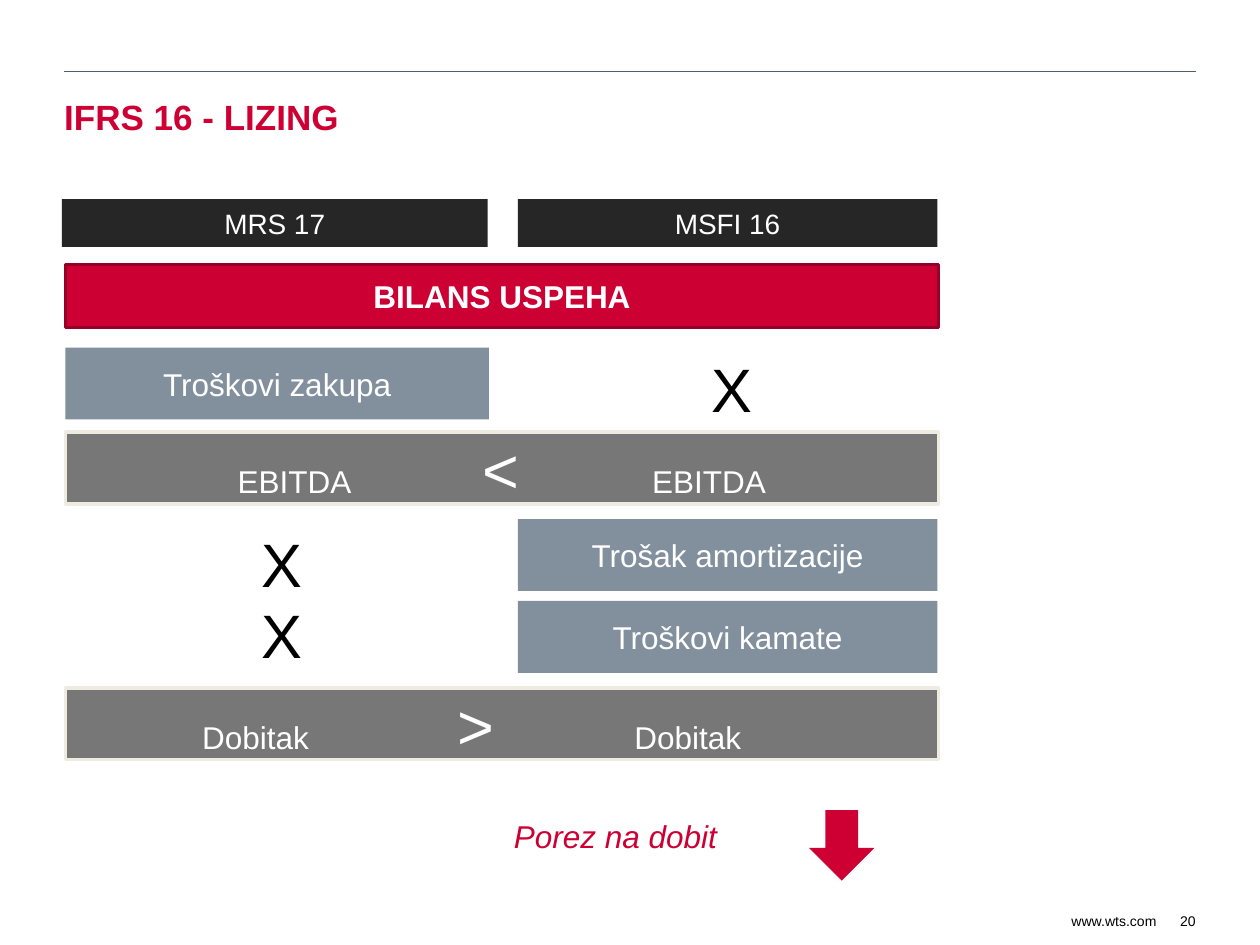
from dataclasses import dataclass
from typing import NamedTuple

from lxml import etree
from pptx import Presentation
from pptx.dml.color import RGBColor
from pptx.enum.shapes import MSO_CONNECTOR, MSO_SHAPE
from pptx.enum.text import MSO_ANCHOR, PP_ALIGN
from pptx.oxml.ns import qn
from pptx.util import Inches, Pt

RECT, DOWN_ARROW = MSO_SHAPE.RECTANGLE, MSO_SHAPE.DOWN_ARROW
STRAIGHT = MSO_CONNECTOR.STRAIGHT
LEFT, CENTER, RIGHT = PP_ALIGN.LEFT, PP_ALIGN.CENTER, PP_ALIGN.RIGHT
TOP, MIDDLE = MSO_ANCHOR.TOP, MSO_ANCHOR.MIDDLE


@dataclass(frozen=True)
class Theme:
    font: str = "Arial"
    red: str = "CE0033"
    banner: str = "CC0033"
    banner_edge: str = "970026"
    header: str = "262626"
    item: str = "82909E"
    result: str = "777777"
    result_edge: str = "EEECE1"
    rule: str = "515D69"
    white: str = "FFFFFF"
    black: str = "000000"
    title_pt: int = 20
    body_pt: int = 18
    header_pt: int = 16
    sign_pt: int = 36
    cross_pt: int = 35
    footer_pt: int = 8


class Span(NamedTuple):
    """Start and length along one axis, in inches."""
    start: float
    size: float


class Block(NamedTuple):
    text: str
    col: Span
    row: Span
    fill: str
    pt: int
    edge: str = ""
    bold: bool = False


class Label(NamedTuple):
    text: str
    col: Span
    row: Span
    pt: int
    color: str
    align: PP_ALIGN = LEFT
    anchor: MSO_ANCHOR = MIDDLE
    bold: bool = False
    italic: bool = False
    inset: float = 0


class Comparison(NamedTuple):
    term: str
    sign: str
    row: Span
    stops: tuple  # centres of term, sign, term from the text edge


T = Theme()

# Grid: page margins, the two standards side by side, and the rows
PAGE = Span(0.51, 8.98)
OLD, NEW, BOTH = Span(0.52, 3.36), Span(4.11, 3.33), Span(0.52, 6.93)
OLD_X, NEW_X = Span(1.98, 0.92), Span(5.55, 0.92)
ROW_H = 0.57
HEADER, BANNER = Span(1.58, 0.38), Span(2.1, 0.5)
RENT, EBITDA, DEPRECIATION, INTEREST, PROFIT, TAX = (
    Span(top, ROW_H) for top in (2.76, 3.43, 4.12, 4.77, 5.46, 6.35))
FOOTER = Span(7.24, 0.14)

BLOCKS = [
    Block("MRS 17", Span(0.49, 3.38), HEADER, T.header, T.header_pt),
    Block("MSFI 16", NEW, HEADER, T.header, T.header_pt),
    Block("BILANS USPEHA", BOTH, BANNER, T.banner, T.body_pt, T.banner_edge, True),
    Block("Troškovi zakupa", OLD, RENT, T.item, T.body_pt),
    Block("Trošak amortizacije", NEW, DEPRECIATION, T.item, T.body_pt),
    Block("Troškovi kamate", NEW, INTEREST, T.item, T.body_pt),
]
COMPARISONS = [
    Comparison("EBITDA", "<", EBITDA, (1.72, 3.36, 5.01)),
    Comparison("Dobitak", ">", PROFIT, (1.41, 3.16, 4.84)),
]
CROSSES = [
    Label("X", col, Span(top, 0.69), T.cross_pt, T.black, anchor=TOP, inset=0.1)
    for col, top in ((NEW_X, 2.74), (OLD_X, 4.13), (OLD_X, 4.69))
]
LABELS = CROSSES + [
    Label("IFRS 16 - LIZING", PAGE, Span(0.76, 0.31), T.title_pt, T.red,
          anchor=TOP, bold=True),
    Label("Porez na dobit", Span(3.98, 3.53), TAX, T.body_pt, T.red,
          italic=True, inset=0.1),
    Label("www.wts.com", Span(8.43, 0.75), FOOTER, T.footer_pt, T.black, RIGHT),
    Label("20", Span(9.27, 0.22), FOOTER, T.footer_pt, T.black, RIGHT),
]


def rgb(color: str) -> RGBColor:
    return RGBColor.from_string(color)


def box(col: Span, row: Span) -> tuple:
    return tuple(Inches(v) for v in (col.start, row.start, col.size, row.size))


def style(font, pt: int, color: str, bold: bool = False, italic: bool = False) -> None:
    font.name, font.size = T.font, Pt(pt)
    font.bold, font.italic = bold, italic
    font.color.rgb = rgb(color)


def draw_shape(slide, kind, col: Span, row: Span, fill: str, edge: str = ""):
    s = slide.shapes.add_shape(kind, *box(col, row))
    s.shadow.inherit = False
    s.fill.solid()
    s.fill.fore_color.rgb = rgb(fill)
    if edge:
        s.line.color.rgb = rgb(edge)
        s.line.width = Pt(2)
    else:
        s.line.fill.background()
    s.text_frame.vertical_anchor = MIDDLE
    return s


def draw_block(slide, b: Block) -> None:
    s = draw_shape(slide, RECT, b.col, b.row, b.fill, b.edge)
    p = s.text_frame.paragraphs[0]
    p.text, p.alignment = b.text, CENTER
    style(p.font, b.pt, T.white, b.bold)


def draw_comparison(slide, c: Comparison) -> None:
    s = draw_shape(slide, RECT, BOTH, c.row, T.result, T.result_edge)
    p = s.text_frame.paragraphs[0]
    p.alignment = LEFT
    tabs = etree.SubElement(p._p.get_or_add_pPr(), qn("a:tabLst"))
    for stop in c.stops:
        etree.SubElement(tabs, qn("a:tab"), pos=str(Inches(stop)), algn="ctr")
    for word, pt in ((c.term, T.body_pt), (c.sign, T.sign_pt), (c.term, T.body_pt)):
        r = p.add_run()
        r.text = "\t" + word
        style(r.font, pt, T.white)


def draw_label(slide, lb: Label) -> None:
    tf = slide.shapes.add_textbox(*box(lb.col, lb.row)).text_frame
    tf.word_wrap, tf.vertical_anchor = True, lb.anchor
    tf.margin_left = tf.margin_right = Inches(lb.inset)
    tf.margin_top = tf.margin_bottom = Inches(lb.inset / 2)
    p = tf.paragraphs[0]
    p.text, p.alignment = lb.text, lb.align
    style(p.font, lb.pt, lb.color, lb.bold, lb.italic)


def draw_rule(slide, y: float) -> None:
    ends = (PAGE.start, y, PAGE.start + PAGE.size, y)
    line = slide.shapes.add_connector(STRAIGHT, *(Inches(v) for v in ends))
    line.line.color.rgb = rgb(T.rule)
    line.line.width = Pt(0.75)
    etree.SubElement(line._element.spPr, qn("a:effectLst"))


def main() -> None:
    prs = Presentation()
    prs.slide_width, prs.slide_height = Inches(10), Inches(7.5)
    slide = prs.slides.add_slide(prs.slide_layouts[6])

    draw_rule(slide, 0.57)
    # Income statement under both standards
    for b in BLOCKS:
        draw_block(slide, b)
    for c in COMPARISONS:
        draw_comparison(slide, c)
    # Title, crosses, tax effect and footer
    for lb in LABELS:
        draw_label(slide, lb)
    draw_shape(slide, DOWN_ARROW, Span(6.42, 0.52), Span(6.43, 0.56), T.red)

    prs.save("out.pptx")


if __name__ == "__main__":
    main()
